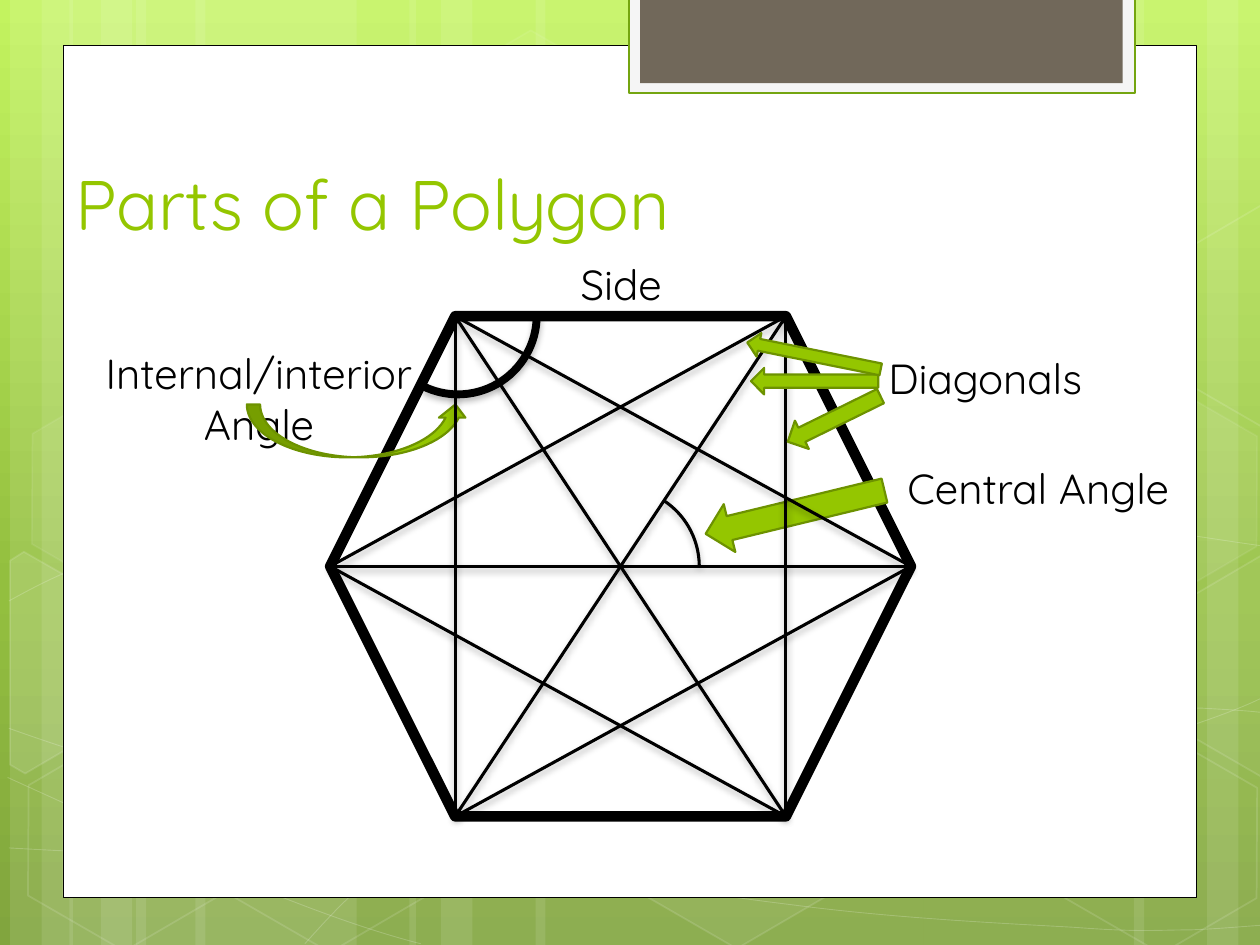
from pptx import Presentation
from pptx import util as u
from pptx.dml.color import RGBColor
from pptx.enum import shapes, text
from pptx.oxml.ns import qn
from lxml import etree

Inches, Pt = u.Inches, u.Pt
SHAPE = shapes.MSO_SHAPE
FONT = "Quicksand"
COLORS = {
    "green": "94C600", "dark_green": "6D9200", "tab_line": "74A510",
    "white": "FFFFFF", "black": "000000", "tab": "F5F5F5", "brown": "71685A",
}
BACKGROUND_STOPS = [(0, "C3F35F"), (62, "93BF3F"), (100, "81A53E")]


def paint(fill, color, alpha=100):
    fill.solid()
    fill.fore_color.rgb = RGBColor.from_string(COLORS[color])
    if alpha < 100:
        node = fill._xPr.find(f"{qn('a:solidFill')}/{qn('a:srgbClr')}")
        etree.SubElement(node, qn("a:alpha"), val=str(alpha * 1000))


def set_effects(shape, shadow=False):
    """Replace the theme shadow by none, or by a soft one below."""
    properties = shape._element.spPr
    for old in properties.findall(qn("a:effectLst")):
        properties.remove(old)
    effects = etree.SubElement(properties, qn("a:effectLst"))
    if shadow:
        outer = etree.SubElement(effects, qn("a:outerShdw"), blurRad=str(Pt(4)),
                                 dist=str(Pt(2)), dir="5400000", rotWithShape="0")
        color = etree.SubElement(outer, qn("a:srgbClr"), val=COLORS["black"])
        etree.SubElement(color, qn("a:alpha"), val="28000")


def style(shape, fill=None, alpha=100, line=None, width=1, line_alpha=100, shadow=False):
    if fill:
        paint(shape.fill, fill, alpha)
    else:
        shape.fill.background()
    if line:
        paint(shape.line.fill, line, line_alpha)
        shape.line.width = Pt(width)
    else:
        shape.line.fill.background()
    set_effects(shape, shadow)


def add_shape(slide, kind, box, rotation=0, adjustments=(), **look):
    shape = slide.shapes.add_shape(kind, *map(Inches, box))
    shape.rotation = rotation
    for index, value in enumerate(adjustments):
        shape.adjustments[index] = value
    style(shape, **look)


def add_outline(slide, points, curved=False, **look):
    """Draw a closed outline, or an open run of cubic curves of three points each."""
    corners = [(Inches(x), Inches(y)) for x, y in points]
    builder = slide.shapes.build_freeform(*corners[0], scale=1.0)
    builder.add_line_segments(corners[1:], close=not curved)
    shape = builder.convert_to_shape()
    if curved:
        segments = list(shape._element.iter(qn("a:lnTo")))
        for first in range(0, len(segments), 3):
            curve = etree.Element(qn("a:cubicBezTo"))
            segments[first].addprevious(curve)
            for segment in segments[first:first + 3]:
                curve.append(segment[0])
                segment.getparent().remove(segment)
    style(shape, **look)


def add_line(slide, start, end):
    line = slide.shapes.add_connector(shapes.MSO_CONNECTOR.STRAIGHT,
                                      *map(Inches, (*start, *end)))
    paint(line.line.fill, "black")
    line.line.width = Pt(1.75)
    set_effects(line, shadow=True)


def write(frame, words, size=24, color="black", align=text.PP_ALIGN.CENTER,
          anchor=text.MSO_ANCHOR.TOP):
    frame.word_wrap = True
    frame.vertical_anchor = anchor
    paragraph = frame.paragraphs[0]
    paragraph.alignment = align
    run = paragraph.add_run()
    run.text = words
    run.font.name, run.font.size = FONT, Pt(size)
    run.font.color.rgb = RGBColor.from_string(COLORS[color])


def add_background(slide, box):
    left, top, width, height = box
    fill = slide.background.fill
    fill.gradient()
    fill.gradient_angle = 270
    stop_list = fill._fill._gradFill.find(qn("a:gsLst"))
    for old in list(stop_list):
        stop_list.remove(old)
    for position, color in BACKGROUND_STOPS:
        stop = etree.SubElement(stop_list, qn("a:gs"), pos=str(position * 1000))
        etree.SubElement(stop, qn("a:srgbClr"), val=color)

    # Upright stripes
    for x, stripe in [(1.08, 1.75), (0.08, 0.5), (0.33, 0.83), (1.55, 1.75), (0.55, 0.5),
                      (0.8, 0.83), (7.33, 1.75), (9.58, 0.5), (9, 0.83), (4.25, 3.08),
                      (3.25, 0.5), (3.5, 0.83)]:
        add_shape(slide, SHAPE.RECTANGLE, (left + x, top, stripe, height),
                  fill="white", alpha=10)

    # Thin sweeping curves: a start, then two controls and an end for each curve
    for knots in [
        [(0.07, 6.73), (0.61, 6.76), (1.15, 6.79), (1.9, 6.78), (2.65, 6.77), (3.58, 6.75),
         (4.58, 6.65), (5.58, 6.55), (7, 6.36), (7.92, 6.17), (8.83, 5.98), (9.77, 5.68),
         (10.07, 5.51)],
        [(0.07, 4.77), (0.36, 4.61), (0.65, 4.46), (1.21, 4.31), (1.78, 4.16), (2.59, 3.94),
         (3.47, 3.87), (4.36, 3.8), (5.44, 3.79), (6.54, 3.87), (7.64, 3.95), (9.47, 4.26),
         (10.07, 4.34)],
        [(0.06, 6.17), (1.27, 6.72), (2.47, 7.27), (3.34, 7.49)],
        [(0.07, 5.78), (0.38, 5.89), (0.7, 6), (1.28, 6.16), (1.86, 6.31), (2.73, 6.56),
         (3.57, 6.73), (4.4, 6.9), (5.45, 7.08), (6.28, 7.18), (7.11, 7.29), (8, 7.33),
         (8.53, 7.36), (9.05, 7.4), (9.19, 7.38), (9.45, 7.38), (9.71, 7.37), (9.89, 7.35),
         (10.07, 7.34)],
        [(2.42, 7.49), (2.6, 7.29), (2.78, 7.09), (3.02, 6.91), (3.26, 6.73), (3.6, 6.53),
         (3.88, 6.39), (4.16, 6.25), (4.33, 6.19), (4.7, 6.09), (5.06, 5.99), (5.73, 5.85),
         (6.08, 5.78), (6.44, 5.71), (6.49, 5.71), (6.8, 5.69), (7.11, 5.66), (7.6, 5.63),
         (7.94, 5.62), (8.29, 5.61), (8.86, 5.62), (8.86, 5.62), (9.08, 5.62), (9.31, 5.62),
         (9.53, 5.62), (9.71, 5.63), (9.88, 5.64), (9.97, 5.65), (10.06, 5.66),
         (10.03, 5.65), (10.06, 5.66)],
    ]:
        add_outline(slide, [(left + x, top + y) for x, y in knots], curved=True,
                    line="white", width=0.5, line_alpha=20)

    # Faint hexagons, whole and cut by the slide edge
    for x, y, alpha, line_alpha in [(3.34, 0.36, 4, 8), (4.97, 5.89, 6, 12),
                                    (0.11, 5.91, 0, 12), (0.14, 3.12, 7, 8),
                                    (1.74, 5.92, 0, 12), (8.34, 5.93, 0, 12),
                                    (8.34, 3.14, 7, 8)]:
        add_shape(slide, SHAPE.HEXAGON, (left + x, top + y, 1.75, 1.52), rotation=30,
                  adjustments=(0.285, 1.155), fill="white" if alpha else None,
                  alpha=alpha, line="white", line_alpha=line_alpha)
    right_cut = [(9.26, 4.85), (10.01, 4.41), (10.09, 4.46), (10.09, 6.13),
                 (10.02, 6.17), (9.26, 5.73)]
    left_cut = [(0.08, 4.45), (0.19, 4.38), (0.96, 4.82), (0.95, 5.7), (0.2, 6.14),
                (0.08, 6.07)]
    for cut, rise, alpha in [(left_cut, 0, 10), (right_cut, 0, 4), (right_cut, 2.78, 0)]:
        add_outline(slide, [(left + x, top + y - rise) for x, y in cut],
                    fill="white" if alpha else None, alpha=alpha,
                    line="white", line_alpha=12)


def add_panel(slide, box):
    left, top, width, height = box
    add_shape(slide, SHAPE.RECTANGLE, box, fill="white", line="black", width=0.5)
    add_shape(slide, SHAPE.RECTANGLE, (left + 4.49, top - 0.38, 4.02, 0.76),
              fill="tab", line="tab_line", width=1.25)
    add_shape(slide, SHAPE.RECTANGLE, (left + 4.58, top - 0.38, 3.83, 0.68), fill="brown")


def add_title(slide, box, words):
    title = slide.shapes.title
    title.left, title.top, title.width, title.height = map(Inches, box)
    write(title.text_frame, words, size=40, color="green", align=text.PP_ALIGN.LEFT,
          anchor=text.MSO_ANCHOR.BOTTOM)
    # Draw the title above the panel
    slide.shapes._spTree.append(title._element)


def add_polygon_diagram(slide, box):
    left, top, width, height = box
    inset = height / 4
    right, middle, bottom = left + width, top + height / 2, top + height
    corners = [(left, middle), (left + inset, top), (right - inset, top),
               (right, middle), (right - inset, bottom), (left + inset, bottom)]

    def add_arrow(kind, x, y, w, h, rotation=0):
        add_shape(slide, kind, (left + x, top + y, w, h), rotation=rotation,
                  fill="green", line="dark_green", width=1.25)

    # Sides and the diagonals through the centre
    add_shape(slide, SHAPE.HEXAGON, box, line="black", width=6)
    for index in range(3):
        add_line(slide, corners[index], corners[index + 3])

    # Labels
    for words, x, y, w, h in [("Side", 1.64, -0.51, 1.34, 0.5),
                              ("Diagonals", 4.23, 0.24, 1.94, 0.5),
                              ("Internal/interior Angle", -2.05, 0.2, 2.97, 0.91),
                              ("Central Angle", 4.33, 1.11, 2.58, 0.5)]:
        label = slide.shapes.add_textbox(*map(Inches, (left + x, top + y, w, h)))
        write(label.text_frame, words)

    # Central and interior angles with their arrows
    for x, y, angles, weight in [(1.68, 1.36, (182.465, 215.549), 1.75),
                                 (0.39, -0.63, (215.868, 69.723), 4.5)]:
        add_shape(slide, SHAPE.ARC, (left + x, top + y, 1.25, 1.25), adjustments=angles,
                  line="black", width=weight, shadow=True)
    add_arrow(SHAPE.CURVED_UP_ARROW, -0.66, 0.7, 1.76, 0.42)
    add_arrow(SHAPE.LEFT_ARROW, 2.96, 1.36, 1.46, 0.39, 346.4)

    # Shorter diagonals and the arrows to three diagonals
    for index in range(6):
        add_line(slide, corners[index], corners[(index + 2) % 6])
    add_arrow(SHAPE.LEFT_ARROW, 3.59, 0.69, 0.82, 0.25, 333.8)
    add_arrow(SHAPE.LEFT_ARROW, 3.34, 0.41, 1.01, 0.21)
    add_arrow(SHAPE.LEFT_ARROW, 3.3, 0.22, 1.08, 0.19, 11.4)


def main():
    presentation = Presentation()
    presentation.slide_width, presentation.slide_height = Inches(10), Inches(7.5)
    slide = presentation.slides.add_slide(presentation.slide_layouts[5])
    add_background(slide, (0, 0, 10, 7.5))
    add_panel(slide, (0.5, 0.36, 9, 6.76))
    add_title(slide, (0.5, 0.74, 9, 1.25), "Parts of a Polygon")
    add_polygon_diagram(slide, (2.62, 2.51, 4.61, 3.97))
    presentation.save("out.pptx")


if __name__ == "__main__":
    main()
